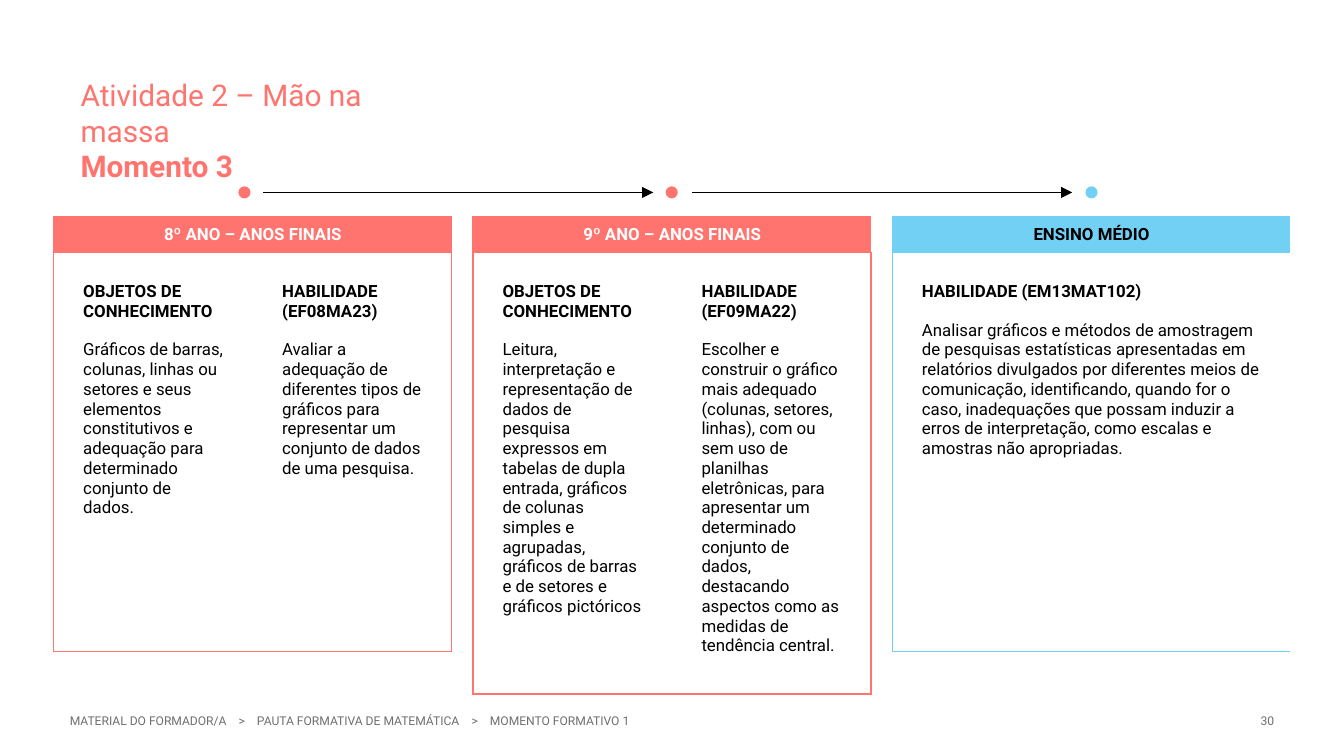
"""Build the slide that compares the skills of three school stages."""
from lxml.etree import SubElement
from pptx import Presentation
from pptx.dml.color import RGBColor
from pptx.enum.shapes import MSO_CONNECTOR as Connector, MSO_SHAPE as Shape
from pptx.enum.text import MSO_ANCHOR as Anchor, PP_ALIGN as Align
from pptx.oxml.ns import qn
from pptx.util import Pt

CORAL = RGBColor(0xFF, 0x74, 0x6E)
BLUE = RGBColor(0x72, 0xD0, 0xF4)
GRAY = RGBColor(0x6F, 0x6F, 0x6E)
BLACK = RGBColor(0, 0, 0)
WHITE = RGBColor(0xFF, 0xFF, 0xFF)

STAGES = [
    ("8º ANO – ANOS FINAIS", CORAL, WHITE, [
        ("OBJETOS DE CONHECIMENTO",
         "Gráficos de barras, colunas, linhas ou setores e seus elementos constitutivos "
         "e adequação para determinado conjunto de dados."),
        ("HABILIDADE (EF08MA23)",
         "Avaliar a adequação de diferentes tipos de gráficos para representar um "
         "conjunto de dados de uma pesquisa."),
    ]),
    ("9º ANO – ANOS FINAIS", CORAL, WHITE, [
        ("OBJETOS DE CONHECIMENTO",
         "Leitura, interpretação e representação de dados de pesquisa expressos em "
         "tabelas de dupla entrada, gráficos de colunas simples e agrupadas, gráficos "
         "de barras e de setores e gráficos pictóricos"),
        ("HABILIDADE (EF09MA22)",
         "Escolher e construir o gráfico mais adequado (colunas, setores, linhas), com "
         "ou sem uso de planilhas eletrônicas, para apresentar um determinado conjunto "
         "de dados, destacando aspectos como as medidas de tendência central."),
    ]),
    ("ENSINO MÉDIO", BLUE, BLACK, [
        ("HABILIDADE (EM13MAT102)",
         "Analisar gráficos e métodos de amostragem de pesquisas estatísticas "
         "apresentadas em relatórios divulgados por diferentes meios de comunicação, "
         "identificando, quando for o caso, inadequações que possam induzir a erros de "
         "interpretação, como escalas e amostras não apropriadas."),
    ]),
]
FOOTER = ["MATERIAL DO FORMADOR/A", " >", " PAUTA FORMATIVA DE MATEMÁTICA", " >",
          " MOMENTO FORMATIVO 1"]
TABLE_LEFT, TABLE_TOP, TABLE_STEP = 28.8, 115.9, 224.64
COLUMN_WIDTH, ROW_HEIGHTS = 106.6, (19.4, 213.8)
DOT_SIZE, TIMELINE_Y = 6.5, 103.1


def style(paragraph, size, color, bold=False):
    paragraph.font.name = "Roboto"
    paragraph.font.size = Pt(size)
    paragraph.font.color.rgb = color
    paragraph.font.bold = bold


def add_text_box(left, top, width, height, anchor):
    frame = slide.shapes.add_textbox(Pt(left), Pt(top), Pt(width), Pt(height)).text_frame
    frame.margin_left = frame.margin_right = frame.margin_top = frame.margin_bottom = 0
    frame.word_wrap = True
    frame.vertical_anchor = anchor
    return frame


presentation = Presentation()
presentation.slide_width, presentation.slide_height = Pt(720), Pt(405)
slide = presentation.slides.add_slide(presentation.slide_layouts[6])

footer = add_text_box(37.4, 367.2, 466.6, 37.4, Anchor.MIDDLE).paragraphs[0]
style(footer, 6.5, GRAY)
for text in FOOTER:
    run = footer.add_run()
    run.text = text
    if text == " >":
        run.font._element.set("spc", "480")

number = add_text_box(639.4, 367.2, 43.2, 37.4, Anchor.MIDDLE).paragraphs[0]
number.text = "30"
number.alignment = Align.RIGHT
style(number, 6.5, GRAY)

title = add_text_box(40.3, 41, 186.5, 49.7, Anchor.TOP)
title.margin_left = Pt(2.9)
title.text = "Atividade 2 – Mão na massa\nMomento 3"
for paragraph, bold in zip(title.paragraphs, (False, True)):
    style(paragraph, 16, CORAL, bold)

for index, (heading, color, heading_color, topics) in enumerate(STAGES):
    table = slide.shapes.add_table(
        2, 2, Pt(TABLE_LEFT + index * TABLE_STEP), Pt(TABLE_TOP),
        Pt(2 * COLUMN_WIDTH), Pt(sum(ROW_HEIGHTS))).table
    table.first_row = table.horz_banding = False
    for column in table.columns:
        column.width = Pt(COLUMN_WIDTH)
    for row, height in zip(table.rows, ROW_HEIGHTS):
        row.height = Pt(height)

    for row in range(2):
        for column in range(2):
            cell = table.cell(row, column)
            cell.margin_left = cell.margin_right = Pt(15.8)
            cell.margin_top = cell.margin_bottom = Pt(15.8 if row else 4.3)
            inner_side = "lnL" if column else "lnR"
            for side in ("lnL", "lnR", "lnT", "lnB"):
                border = SubElement(cell._tc.tcPr, qn(f"a:{side}"), w=str(Pt(0.75)))
                if side == inner_side:
                    SubElement(border, qn("a:noFill"))
                else:
                    fill = SubElement(border, qn("a:solidFill"))
                    SubElement(fill, qn("a:srgbClr"), val=str(color))
            if row:
                cell.fill.background()
            else:
                cell.fill.solid()
                cell.fill.fore_color.rgb = color

    table.cell(0, 0).merge(table.cell(0, 1))
    if len(topics) == 1:
        table.cell(1, 0).merge(table.cell(1, 1))
    table.cell(0, 0).text = heading
    paragraph = table.cell(0, 0).text_frame.paragraphs[0]
    paragraph.alignment = Align.CENTER
    style(paragraph, 9, heading_color, True)
    for column, topic in enumerate(topics):
        frame = table.cell(1, column).text_frame
        frame.text = "\n".join(topic)
        label, description = frame.paragraphs
        style(label, 9, BLACK, True)
        style(description, 9, BLACK)
        description.space_before = Pt(10)

for left, color in ((127.7, CORAL), (356.6, CORAL), (581.5, BLUE)):
    dot = slide.shapes.add_shape(Shape.OVAL, Pt(left), Pt(TIMELINE_Y - DOT_SIZE / 2),
                                 Pt(DOT_SIZE), Pt(DOT_SIZE))
    dot.shadow.inherit = False
    dot.fill.solid()
    dot.fill.fore_color.rgb = color
    dot.line.fill.background()

for start, end in ((141, 350), (370.8, 574.4)):
    arrow = slide.shapes.add_connector(Connector.STRAIGHT, Pt(start), Pt(TIMELINE_Y),
                                       Pt(end), Pt(TIMELINE_Y))
    arrow.line.color.rgb = BLACK
    arrow.line.width = Pt(0.75)
    SubElement(arrow.line._get_or_add_ln(), qn("a:tailEnd"), type="triangle")
    SubElement(arrow._element.spPr, qn("a:effectLst"))

presentation.save("out.pptx")
